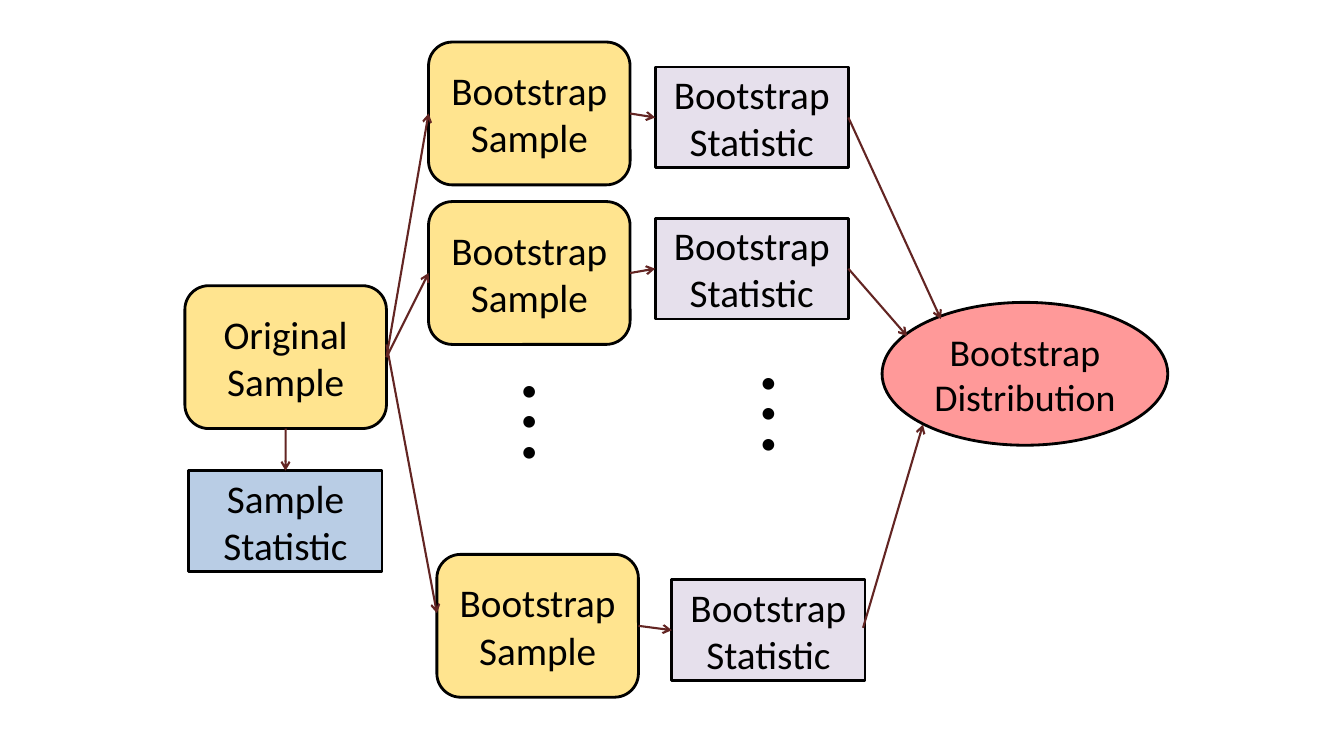
"""Bootstrap diagram: one sample, its resamples, their statistics and the distribution."""
from lxml import etree
from pptx import Presentation
from pptx import util as u
from pptx.dml import color
from pptx.enum import shapes, text
from pptx.oxml import ns

COLOURS = {
    "sample": "FFE48F",
    "statistic": "E6E0EC",
    "observed": "B9CDE5",
    "distribution": "FF9999",
    "arrow": "632523",
    "ink": "000000",
}
FONT = "Calibri"
SAMPLE_SIZE = (5.08, 3.6)
STATISTIC_SIZE = (4.87, 2.54)
DOTS_SIZE = (3.18, 2.57)
TOP, LEFT, BOTTOM, RIGHT = range(4)
KINDS = shapes.MSO_SHAPE


def rgb(name):
    """Return the named colour."""
    return color.RGBColor.from_string(COLOURS[name])


def style_paragraphs(frame, size):
    """Centre every paragraph and set its font."""
    for para in frame.paragraphs:
        para.alignment = text.PP_ALIGN.CENTER
        para.font.name = FONT
        para.font.size = u.Pt(size)
        para.font.color.rgb = rgb("ink")


def add_node(page, kind, box, fill, words, size=28):
    """Draw an outlined shape with a centred label in the box."""
    node = page.shapes.add_shape(kind, *map(u.Cm, box))
    node.shadow.inherit = False
    node.fill.solid()
    node.fill.fore_color.rgb = rgb(fill)
    node.line.color.rgb = rgb("ink")
    node.line.width = u.Pt(2)
    frame = node.text_frame
    frame.word_wrap = True
    frame.vertical_anchor = text.MSO_ANCHOR.MIDDLE
    frame.text = words
    style_paragraphs(frame, size)
    return node


def add_arrow(page, start=(0, 0), end=(0, 0), source=None, target=None):
    """Draw an arrow between points, or between (shape, side) pairs where given."""
    arrow = page.shapes.add_connector(
        shapes.MSO_CONNECTOR.STRAIGHT, *map(u.Cm, (*start, *end)))
    if source:
        arrow.begin_connect(*source)
    if target:
        arrow.end_connect(*target)
    arrow.line.color.rgb = rgb("arrow")
    arrow.line.width = u.Pt(1.5)
    outline = arrow.line._get_or_add_ln()
    etree.SubElement(outline, ns.qn("a:tailEnd"), type="arrow")
    etree.SubElement(arrow._element.spPr, ns.qn("a:effectLst"))


def add_dots(page, left, top):
    """Write three stacked dots."""
    box = page.shapes.add_textbox(*map(u.Cm, (left, top, *DOTS_SIZE)))
    box.text_frame.word_wrap = True
    box.text_frame.text = "\n".join("●" * 3)
    style_paragraphs(box.text_frame, 18)


def add_observed(page, left, top):
    """Draw the original sample above its statistic and return the sample."""
    sample = add_node(page, KINDS.ROUNDED_RECTANGLE, (left, top, *SAMPLE_SIZE),
                      "sample", "Original Sample")
    statistic = add_node(page, KINDS.RECTANGLE,
                         (left + 0.1, top + 4.66, *STATISTIC_SIZE),
                         "observed", "Sample Statistic")
    add_arrow(page, source=(sample, BOTTOM), target=(statistic, TOP))
    return sample


def add_resample(page, left, top, gap, drop):
    """Draw a bootstrap sample with its statistic to the right and return both."""
    width, height = SAMPLE_SIZE
    sample = add_node(page, KINDS.ROUNDED_RECTANGLE, (left, top, width, height),
                      "sample", "Bootstrap\vSample")
    statistic = add_node(page, KINDS.RECTANGLE,
                         (left + width + gap, top + drop, *STATISTIC_SIZE),
                         "statistic", "Bootstrap Statistic")
    add_arrow(page, source=(sample, RIGHT), target=(statistic, LEFT))
    return sample, statistic


def add_distribution(page, left, top):
    """Draw the ellipse where the bootstrap statistics meet."""
    node = add_node(page, KINDS.OVAL, (left, top, 7.2, 3.6),
                    "distribution", "Bootstrap Distribution", 27)
    frame = node.text_frame
    frame.margin_left = frame.margin_right = 0
    frame.margin_top = frame.margin_bottom = 0


def build_diagram(page):
    """Place the regions and join them with arrows."""
    original = add_observed(page, 4.66, 7.2)
    add_distribution(page, 22.23, 7.62)
    for top, drop, end in ((1.06, 0.63, (23.71, 8.04)), (5.08, 0.42, (22.86, 8.47))):
        sample, statistic = add_resample(page, 10.8, top, 0.63, drop)
        add_arrow(page, source=(original, RIGHT), target=(sample, LEFT))
        add_arrow(page, end=end, source=(statistic, RIGHT))
    add_resample(page, 11.01, 13.97, 0.84, 0.64)
    add_arrow(page, (9.74, 8.68), (11.01, 15.45))
    add_arrow(page, (21.75, 15.82), (23.26, 10.7))
    add_dots(page, 11.75, 9.31)
    add_dots(page, 17.78, 9.11)


def main():
    """Build the deck and save it."""
    deck = Presentation()
    deck.slide_width, deck.slide_height = u.Cm(33.87), u.Cm(19.05)
    build_diagram(deck.slides.add_slide(deck.slide_layouts[6]))
    deck.save("out.pptx")


if __name__ == "__main__":
    main()
